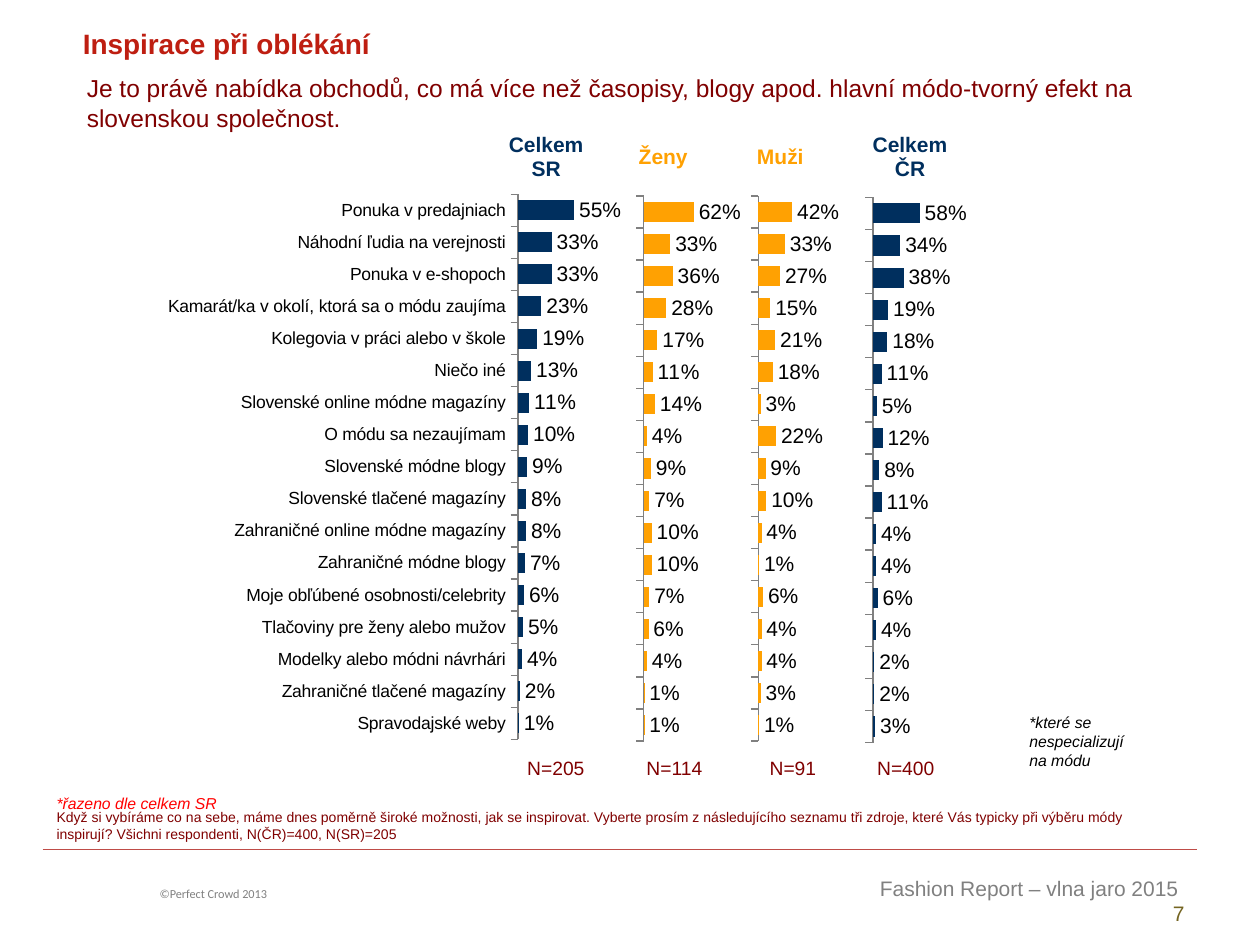
from lxml import etree
from pptx import Presentation
from pptx.chart.data import CategoryChartData
from pptx.dml.color import RGBColor
from pptx.enum.chart import XL_CHART_TYPE, XL_LABEL_POSITION, XL_TICK_LABEL_POSITION, XL_TICK_MARK
from pptx.enum.shapes import MSO_CONNECTOR
from pptx.enum.text import MSO_ANCHOR, PP_ALIGN
from pptx.oxml.ns import qn
from pptx.util import Cm, Pt

BAR_CLUSTERED = XL_CHART_TYPE.BAR_CLUSTERED
OUTSIDE_END = XL_LABEL_POSITION.OUTSIDE_END
LABELS_LOW = XL_TICK_LABEL_POSITION.LOW
LABELS_NONE = XL_TICK_LABEL_POSITION.NONE
TICK_OUT = XL_TICK_MARK.OUTSIDE
TICK_NONE = XL_TICK_MARK.NONE
STRAIGHT = MSO_CONNECTOR.STRAIGHT
MIDDLE = MSO_ANCHOR.MIDDLE
LEFT, CENTER, RIGHT = PP_ALIGN.LEFT, PP_ALIGN.CENTER, PP_ALIGN.RIGHT

NAVY = RGBColor(0x00, 0x2F, 0x5E)
ORANGE = RGBColor(0xFF, 0xA1, 0x02)
MAROON = RGBColor(0x80, 0x00, 0x00)
TITLE_RED = RGBColor(0xBE, 0x1E, 0x11)
BRIGHT_RED = RGBColor(0xFF, 0x00, 0x00)
RULE_RED = RGBColor(0xBF, 0x4C, 0x48)
GRAY = RGBColor(0x80, 0x80, 0x80)
OLIVE = RGBColor(0x75, 0x65, 0x22)
BLACK = RGBColor(0x00, 0x00, 0x00)

SOURCES = [
    "Spravodajské weby", "Zahraničné tlačené magazíny", "Modelky alebo módni návrhári",
    "Tlačoviny pre ženy alebo mužov", "Moje obľúbené osobnosti/celebrity",
    "Zahraničné módne blogy", "Zahraničné online módne magazíny",
    "Slovenské tlačené magazíny", "Slovenské módne blogy", "O módu sa nezaujímam",
    "Slovenské online módne magazíny", "Niečo iné", "Kolegovia v práci alebo v škole",
    "Kamarát/ka v okolí, ktorá sa o módu zaujíma", "Ponuka v e-shopoch",
    "Náhodní ľudia na verejnosti", "Ponuka v predajniach",
]
RANKS = [str(rank) for rank in range(1, len(SOURCES) + 1)]
TOTAL_SR = [1, 2, 4, 5, 6, 7, 8, 8, 9, 10, 11, 13, 19, 23, 33, 33, 55]
WOMEN = [1, 1, 4, 6, 7, 10, 10, 7, 9, 4, 14, 11, 17, 28, 36, 33, 62]
MEN = [1, 3, 4, 4, 6, 1, 4, 10, 9, 22, 3, 18, 21, 15, 27, 33, 42]
TOTAL_CR = [3, 2, 2, 4, 6, 4, 4, 11, 8, 12, 5, 11, 18, 19, 38, 34, 58]


def style_font(font, size, color, bold=False, italic=False, name="Arial"):
    font.name = name
    font.size = Pt(size)
    font.color.rgb = color
    font.bold = bold
    font.italic = italic


def add_text(slide, box, text, size, color, wrap=True, align=LEFT, **style):
    frame = slide.shapes.add_textbox(*map(Cm, box)).text_frame
    frame.word_wrap = wrap
    frame.text = text
    paragraph = frame.paragraphs[0]
    paragraph.alignment = align
    style_font(paragraph.runs[0].font, size, color, **style)
    return paragraph


def add_heading(slide, left, top):
    add_text(slide, (left, top, 19.08, 0.94), "Inspirace při oblékání", 16, TITLE_RED, bold=True)
    add_text(slide, (left + 0.08, top + 0.94, 22.81, 2.06),
             "Je to právě nabídka obchodů, co má více než časopisy, blogy apod. "
             "hlavní módo-tvorný efekt na slovenskou společnost.", 14, MAROON)


def add_notes(slide, left, top):
    add_text(slide, (left, top, 3.89, 0.64), "*řazeno dle celkem SR", 9, BRIGHT_RED,
             wrap=False, italic=True)
    add_text(slide, (left, top + 0.3, 23.01, 0.94),
             "Když si vybíráme co na sebe, máme dnes poměrně široké možnosti, jak se inspirovat. "
             "Vyberte prosím z následujícího seznamu tři zdroje, které Vás typicky při výběru módy "
             "inspirují? Všichni respondenti, N(ČR)=400, N(SR)=205", 8, MAROON)
    add_text(slide, (left + 19.61, top - 1.63, 2.82, 1.42),
             "*které se nespecializují na módu", 9, BLACK, italic=True)


def add_footer(slide, left, top, width):
    right = left + width
    rule = slide.shapes.add_connector(STRAIGHT, Cm(left), Cm(top), Cm(right), Cm(top))
    rule.line.color.rgb = RULE_RED
    rule.line.width = Pt(0.75)
    etree.SubElement(rule._element.spPr, qn("a:effectLst"))
    add_text(slide, (left + 2.11, top + 0.63, 7.39, 0.56), "©Perfect Crowd 2013", 7, GRAY,
             name="Calibri")
    report = add_text(slide, (right - 9.42, top + 0.41, 9.42, 1.27),
                      "Fashion Report – vlna jaro 2015 ", 12, GRAY, align=RIGHT)
    report.add_line_break()
    page = report.add_run()
    page.text = "7"
    style_font(page.font, 12, OLIVE)


def set_plot_box(chart, box):
    plot_area = chart._chartSpace.chart.plotArea
    for old_layout in plot_area.findall(qn("c:layout")):
        plot_area.remove(old_layout)
    layout = etree.Element(qn("c:layout"))
    manual = etree.SubElement(layout, qn("c:manualLayout"))
    settings = [("layoutTarget", "inner"), ("xMode", "edge"), ("yMode", "edge")]
    settings += zip("xywh", map(str, box))
    for tag, value in settings:
        etree.SubElement(manual, qn(f"c:{tag}")).set("val", value)
    plot_area.insert(0, layout)


def add_bars(slide, box, plot_box, categories, values, color, show_names=False):
    chart_data = CategoryChartData(number_format="0")
    chart_data.categories = categories
    chart_data.add_series("Series 1", values)
    chart = slide.shapes.add_chart(BAR_CLUSTERED, *map(Cm, box), chart_data).chart
    chart.has_legend = False
    chart.has_title = False
    style_font(chart.font, 12, BLACK)
    set_plot_box(chart, plot_box)

    names = chart.category_axis
    names.tick_label_position = LABELS_LOW if show_names else LABELS_NONE
    names.major_tick_mark = TICK_OUT
    names.minor_tick_mark = TICK_NONE
    names.has_major_gridlines = False
    names.format.line.color.rgb = GRAY
    style_font(names.tick_labels.font, 10 if show_names else 11, BLACK)
    percent = chart.value_axis
    percent.minimum_scale, percent.maximum_scale = 0, 100
    percent.has_major_gridlines = False
    percent.visible = False

    plot = chart.plots[0]
    plot.gap_width = 60
    plot.vary_by_categories = False
    fill = plot.series[0].format.fill
    fill.solid()
    fill.fore_color.rgb = color
    plot.has_data_labels = True
    labels = plot.data_labels
    labels.show_value = True
    labels.number_format = '#,##0"%"'
    labels.number_format_is_linked = False
    labels.position = OUTSIDE_END
    style_font(labels.font, 12, BLACK)


def add_comparison(slide, left, top):
    height = 12.78
    add_bars(slide, (left, top, 15.85, height), (0.84, 0.06, 0.13, 0.86),
             SOURCES, TOTAL_SR, NAVY, show_names=True)
    groups = [(WOMEN, ORANGE, 0), (MEN, ORANGE, 0), (TOTAL_CR, NAVY, 0.03)]
    for column, (values, color, drop) in enumerate(groups):
        add_bars(slide, (left + 11.96 + 2.31 * column, top - 0.03 + drop, 6.27, height),
                 (0.62, 0.065, 0.26, 0.86), RANKS, values, color)


def add_label_row(slide, left, top, widths, height, labels, size, bold=False):
    table = slide.shapes.add_table(1, len(labels), Cm(left), Cm(top),
                                   Cm(sum(widths)), Cm(height)).table
    table.first_row = False
    table.horz_banding = False
    table.rows[0].height = Cm(height)
    for index, (text, color) in enumerate(labels):
        table.columns[index].width = Cm(widths[index])
        cell = table.cell(0, index)
        cell.fill.background()
        cell.vertical_anchor = MIDDLE
        cell.margin_left = cell.margin_right = cell.margin_top = Cm(0.03)
        cell.margin_bottom = 0
        cell.text_frame.text = text
        for paragraph in cell.text_frame.paragraphs:
            paragraph.alignment = CENTER
            style_font(paragraph.runs[0].font, size, color, bold=bold)


def main():
    deck = Presentation()
    deck.slide_width, deck.slide_height = Cm(25.4), Cm(19.05)
    slide = deck.slides.add_slide(deck.slide_layouts[6])
    add_footer(slide, 0.86, 17.12, 23.27)
    add_heading(slide, 1.42, 0.41)
    add_notes(slide, 0.89, 15.88)
    add_comparison(slide, -2.87, 3.15)
    add_label_row(slide, 9.83, 2.59, [2.36, 2.36, 2.36, 2.87], 1.12,
                  [("Celkem\nSR", NAVY), ("Ženy", ORANGE), ("Muži", ORANGE),
                   ("Celkem\nČR", NAVY)], 12, bold=True)
    add_label_row(slide, 10.01, 15.21, [2.39, 2.39, 2.39, 2.16], 0.53,
                  [(f"N={count}", MAROON) for count in (205, 114, 91, 400)], 11)
    deck.save("out.pptx")


if __name__ == "__main__":
    main()
